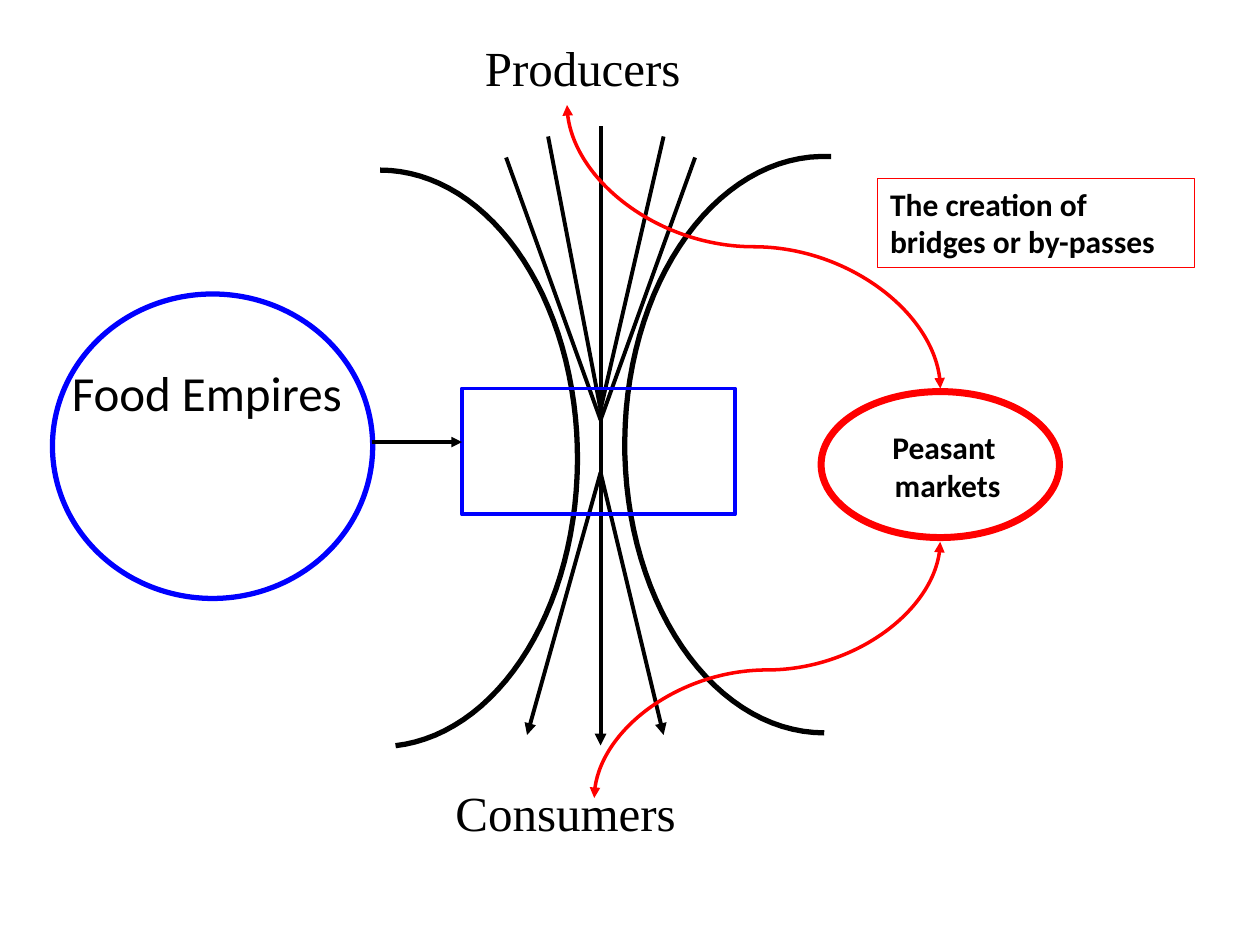
from math import cos, sin, radians
from lxml import etree
from pptx import Presentation
from pptx.dml.color import RGBColor
from pptx.enum.shapes import MSO_CONNECTOR as CONN, MSO_SHAPE as SHAPE
from pptx.enum.text import MSO_ANCHOR, MSO_AUTO_SIZE, PP_ALIGN
from pptx.oxml.ns import qn
from pptx.util import Inches, Pt

BLACK = RGBColor(0, 0, 0)
BLUE = RGBColor(0, 0, 255)
RED = RGBColor(255, 0, 0)
COLS, ROWS = 120, 90
WIDTH, HEIGHT = Inches(10), Inches(7.5)


def col(n):
    return round(n * WIDTH / COLS)


def row(n):
    return round(n * HEIGHT / ROWS)


def place(x, y, w, h):
    return col(x), row(y), col(w), row(h)


def outline(sp, color, width):
    sp.shadow.inherit = False
    sp.fill.background()
    sp.line.color.rgb = color
    sp.line.width = Pt(width)


def add_outlined(s, kind, box, color, width):
    sp = s.shapes.add_shape(kind, *place(*box))
    outline(sp, color, width)
    return sp


def write(sp, lines, size, font="Calibri", bold=False, align=PP_ALIGN.LEFT, wrap=True):
    tf = sp.text_frame
    tf.word_wrap = wrap
    tf.auto_size = MSO_AUTO_SIZE.SHAPE_TO_FIT_TEXT
    tf.vertical_anchor = MSO_ANCHOR.TOP
    for i, line in enumerate(lines):
        p = tf.paragraphs[0] if i == 0 else tf.add_paragraph()
        p.alignment = align
        r = p.add_run()
        r.text = line
        r.font.name = font
        r.font.size = Pt(size)
        r.font.bold = bold
        r.font.color.rgb = BLACK


def add_text(s, box, lines, size, **style):
    write(s.shapes.add_textbox(*place(*box)), lines, size, **style)


def connect(s, kind, start, end, color, width, heads=()):
    c = s.shapes.add_connector(kind, col(start[0]), row(start[1]), col(end[0]), row(end[1]))
    c.line.color.rgb = color
    c.line.width = Pt(width)
    ln = c.line._ln
    for head in heads:
        etree.SubElement(ln, qn(f"a:{head}"), type="triangle")
    etree.SubElement(c._element.spPr, qn("a:effectLst"))
    return c


def curve_vertically(s, start, end):
    (x1, y1), (x2, y2) = start, end
    cx, cy = (x1 + x2) / 2, (y1 + y2) / 2
    dx, dy = (x2 - x1) / 2, (y2 - y1) / 2
    c = connect(s, CONN.CURVE, (cx + dy, cy - dx), (cx - dy, cy + dx),
                RED, 2, ("headEnd", "tailEnd"))
    c._element.spPr.find(qn("a:xfrm")).set("rot", str(270 * 60000))


def add_arc(s, cx, cy, rx, ry, first, last, steps=60):
    angles = [radians(first + (last - first) * i / steps) for i in range(steps + 1)]
    points = [(col(cx + rx * cos(a)), row(cy + ry * sin(a))) for a in angles]
    fb = s.shapes.build_freeform(*points[0])
    fb.add_line_segments(points[1:], close=False)
    outline(fb.convert_to_shape(), BLACK, 3)


def hourglass(s, x, y, w, h):
    add_arc(s, x, y + h / 2 + 0.7, 18.8, h / 2, -90, 85.5)
    add_arc(s, x + w, y + h / 2 - 0.6, 19, h / 2, 90, 272)


def flows(s, axis, top, h):
    connect(s, CONN.STRAIGHT, (axis, top), (axis, top + h), BLACK, 2.25, ("tailEnd",))
    for dx, start, end in ((9, 3, 28), (-9, 3, 28), (6, 1, 27), (-5, 1, 27)):
        connect(s, CONN.STRAIGHT, (axis + dx, top + start), (axis, top + end), BLACK, 2.25)
    for dx in (6, -7):
        connect(s, CONN.STRAIGHT, (axis, top + 33), (axis + dx, top + h - 1),
                BLACK, 2.25, ("tailEnd",))


def empires(s, x, y, w, h):
    add_text(s, (x - 0.8, y + 5.9, w + 0.5, 12.4), ["Food Empires"], 28, align=PP_ALIGN.CENTER)
    add_outlined(s, SHAPE.OVAL, (x, y, w, h), BLUE, 3)


def markets(s, x, y, w, h):
    add_outlined(s, SHAPE.OVAL, (x, y, w, h), RED, 4)
    middle = x + w / 2
    curve_vertically(s, (54, 10), (middle, y - 0.3))
    curve_vertically(s, (56.6, 76), (middle, y + h + 0.4))
    add_text(s, (x + 4.3, y + 2.9, 14.8, 8.4), ["Peasant", " markets"], 18,
             bold=True, align=PP_ALIGN.CENTER, wrap=False)


def main():
    prs = Presentation()
    prs.slide_width, prs.slide_height = WIDTH, HEIGHT
    s = prs.slides.add_slide(prs.slide_layouts[6])
    hourglass(s, 36.2, 15.5, 42.3, 54.9)
    for label, box in (("Producers", (45, 3, 21.1, 6.8)), ("Consumers", (42.2, 73.9, 23.4, 6.8))):
        add_text(s, box, [label], 28, font="Times New Roman", wrap=False)
    flows(s, 57.2, 12, 59)
    add_outlined(s, SHAPE.RECTANGLE, (44, 37, 26, 12), BLUE, 2.25)
    empires(s, 5, 28, 30.5, 29)
    note = add_outlined(s, SHAPE.RECTANGLE, (83.6, 17, 30.2, 8.5), RED, 0.75)
    write(note, ["The creation of bridges or by-passes"], 18, bold=True)
    markets(s, 78.2, 37.3, 22.7, 13.9)
    connect(s, CONN.STRAIGHT, (35.4, 42.1), (44, 42.1), BLACK, 2, ("tailEnd",))
    prs.save("out.pptx")


if __name__ == "__main__":
    main()
